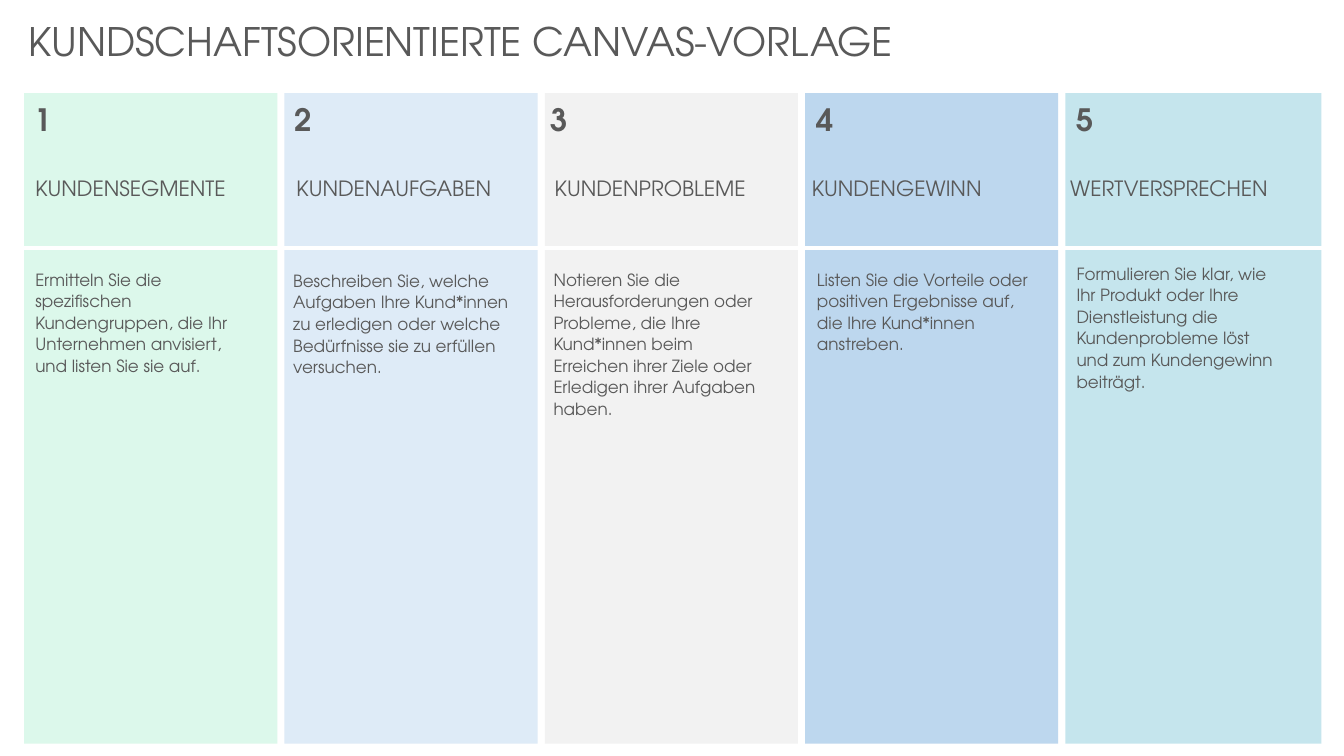
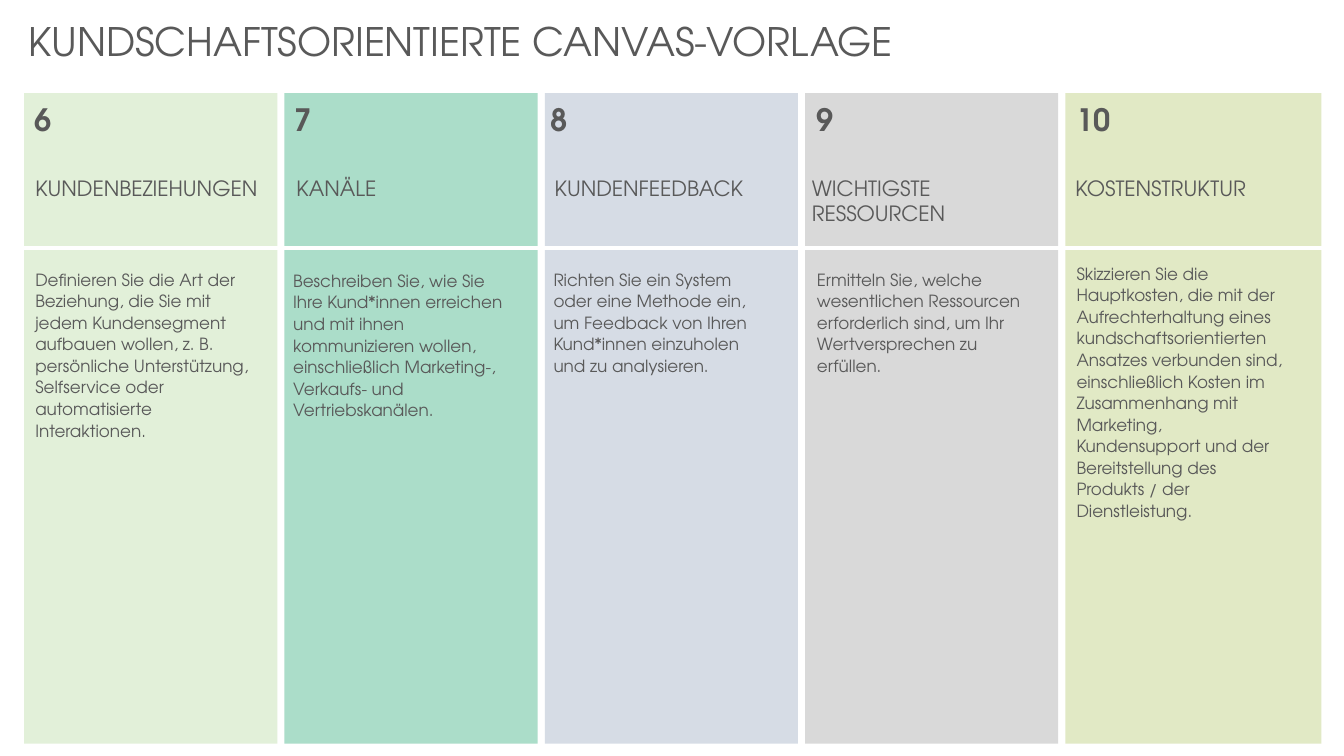
from dataclasses import dataclass

from lxml.etree import SubElement
from pptx import Presentation
from pptx.dml.color import RGBColor
from pptx.enum.shapes import MSO_CONNECTOR as CONN, MSO_SHAPE as SHAPE
from pptx.enum.text import MSO_ANCHOR as ANCHOR, MSO_AUTO_SIZE as AUTO, PP_ALIGN as ALIGN
from pptx.oxml.ns import qn
from pptx.util import Cm, Pt

FONT = "TeX Gyre Adventor"
TEXT, WHITE = "595959", "FFFFFF"
TITLE = "KUNDSCHAFTSORIENTIERTE CANVAS-VORLAGE"
TITLE_ONLY = 5

# Canvas grid, in cm
LEFT, TOP, HEIGHT = 0.61, 2.35, 16.39
PITCH, GAP = 6.56, 0.18
HEADER_H = 3.9
RIGHT = 33.53


@dataclass
class Column:
    fill: str
    heading: str
    text: str
    heading_dx: float = 0


@dataclass
class Slot:
    """Fine placement, in cm, that a column position has on every slide."""
    number_dx: float
    text_dx: float
    text_dy: float
    text_w: float
    extra_w: float = 0


SLOTS = [
    Slot(0, 0.03, 0, 6.05),
    Slot(0, -0.03, 0.03, 5.97),
    Slot(-0.1, -0.03, 0, 5.97),
    Slot(0.03, 0.05, 0, 6.05),
    Slot(0.03, 0.03, -0.15, 5.72, 0.07),
]

CANVASES = [
    [
        Column("DCF8EB", "KUNDENSEGMENTE",
               "Ermitteln Sie die spezifischen Kundengruppen, die Ihr Unternehmen "
               "anvisiert, und listen Sie sie auf.", 0.03),
        Column("DEEBF7", "KUNDENAUFGABEN",
               "Beschreiben Sie, welche Aufgaben Ihre Kund*innen zu erledigen oder "
               "welche Bedürfnisse sie zu erfüllen versuchen.", 0.05),
        Column("F2F2F2", "KUNDENPROBLEME",
               "Notieren Sie die Herausforderungen oder Probleme, die Ihre Kund*innen "
               "beim Erreichen ihrer Ziele oder Erledigen ihrer Aufgaben haben."),
        Column("BDD7EE", "KUNDENGEWINN",
               "Listen Sie die Vorteile oder positiven Ergebnisse auf, die Ihre "
               "Kund*innen anstreben.", -0.08),
        Column("C5E5ED", "WERTVERSPRECHEN",
               "Formulieren Sie klar, wie Ihr Produkt oder Ihre Dienstleistung die "
               "Kundenprobleme löst und zum Kundengewinn beiträgt.", -0.13),
    ],
    [
        Column("E2F0D9", "KUNDENBEZIEHUNGEN",
               "Definieren Sie die Art der Beziehung, die Sie mit jedem Kundensegment "
               "aufbauen wollen, z. B. persönliche Unterstützung, Selfservice oder "
               "automatisierte Interaktionen.", 0.03),
        Column("ABDDC9", "KANÄLE",
               "Beschreiben Sie, wie Sie Ihre Kund*innen erreichen und mit ihnen "
               "kommunizieren wollen, einschließlich Marketing-, Verkaufs- und "
               "Vertriebskanälen.", 0.05),
        Column("D6DCE5", "KUNDENFEEDBACK",
               "Richten Sie ein System oder eine Methode ein, um Feedback von Ihren "
               "Kund*innen einzuholen und zu analysieren."),
        Column("D9D9D9", "WICHTIGSTE\nRESSOURCEN",
               "Ermitteln Sie, welche wesentlichen Ressourcen erforderlich sind, um "
               "Ihr Wertversprechen zu erfüllen.", -0.08),
        Column("E1E9C5", "KOSTENSTRUKTUR",
               "Skizzieren Sie die Hauptkosten, die mit der Aufrechterhaltung eines "
               "kundschaftsorientierten Ansatzes verbunden sind, einschließlich Kosten "
               "im Zusammenhang mit Marketing, Kundensupport und der Bereitstellung "
               "des Produkts / der Dienstleistung."),
    ],
]


def rgb(color):
    return RGBColor.from_string(color)


def write(sp, text, size, bold=False, spaced=False):
    tf = sp.text_frame
    tf.word_wrap = True
    tf.auto_size = AUTO.NONE
    tf.vertical_anchor = ANCHOR.TOP
    p = tf.paragraphs[0]
    p.alignment = ALIGN.LEFT
    if spaced:
        p.line_spacing = 1.07
        p.space_after = Pt(8)
    for i, line in enumerate(text.split("\n")):
        if i:
            p.add_line_break()
        r = p.add_run()
        r.text = line
        r.font.name = FONT
        r.font.size = Pt(size)
        r.font.bold = bold
        r.font.color.rgb = rgb(TEXT)


def add_text(slide, left, top, width, height, text, size, **style):
    sp = slide.shapes.add_textbox(Cm(left), Cm(top), Cm(width), Cm(height))
    write(sp, text, size, **style)


def add_title(slide, left, top, width, height):
    sp = slide.shapes.title
    sp.left, sp.top, sp.width, sp.height = Cm(left), Cm(top), Cm(width), Cm(height)
    write(sp, TITLE, 28)


def add_column(slide, left, top, width, height, number, column, slot):
    sp = slide.shapes.add_shape(
        SHAPE.RECTANGLE, Cm(left), Cm(top), Cm(width), Cm(height))
    sp.shadow.inherit = False
    sp.fill.solid()
    sp.fill.fore_color.rgb = rgb(column.fill)
    sp.line.fill.background()
    add_text(slide, left + slot.number_dx, top, 1.52, 1.63,
             str(number), 22, bold=True, spaced=True)
    add_text(slide, left + column.heading_dx, top + 1.95, 6.35, 1.55,
             column.heading, 15)
    add_text(slide, left + slot.text_dx, top + 4.28 + slot.text_dy, slot.text_w, 4,
             column.text, 12, spaced=True)


def add_divider(slide, left, right, y):
    line = slide.shapes.add_connector(
        CONN.STRAIGHT, Cm(left), Cm(y), Cm(right), Cm(y))
    line.line.color.rgb = rgb(WHITE)
    line.line.width = Pt(2.25)
    SubElement(line._element.spPr, qn("a:effectLst"))


def add_canvas(prs, columns, first_number):
    slide = prs.slides.add_slide(prs.slide_layouts[TITLE_ONLY])
    add_title(slide, 0.46, 0.3, 32.89, 1.45)
    for i, (column, slot) in enumerate(zip(columns, SLOTS)):
        add_column(slide, LEFT + i * PITCH, TOP, PITCH - GAP + slot.extra_w, HEIGHT,
                   first_number + i, column, slot)
    add_divider(slide, LEFT, RIGHT, TOP + HEADER_H)


def main():
    prs = Presentation()
    prs.slide_width, prs.slide_height = Cm(33.87), Cm(19.05)
    for i, columns in enumerate(CANVASES):
        add_canvas(prs, columns, 1 + i * len(SLOTS))
    prs.save("out.pptx")


if __name__ == "__main__":
    main()
